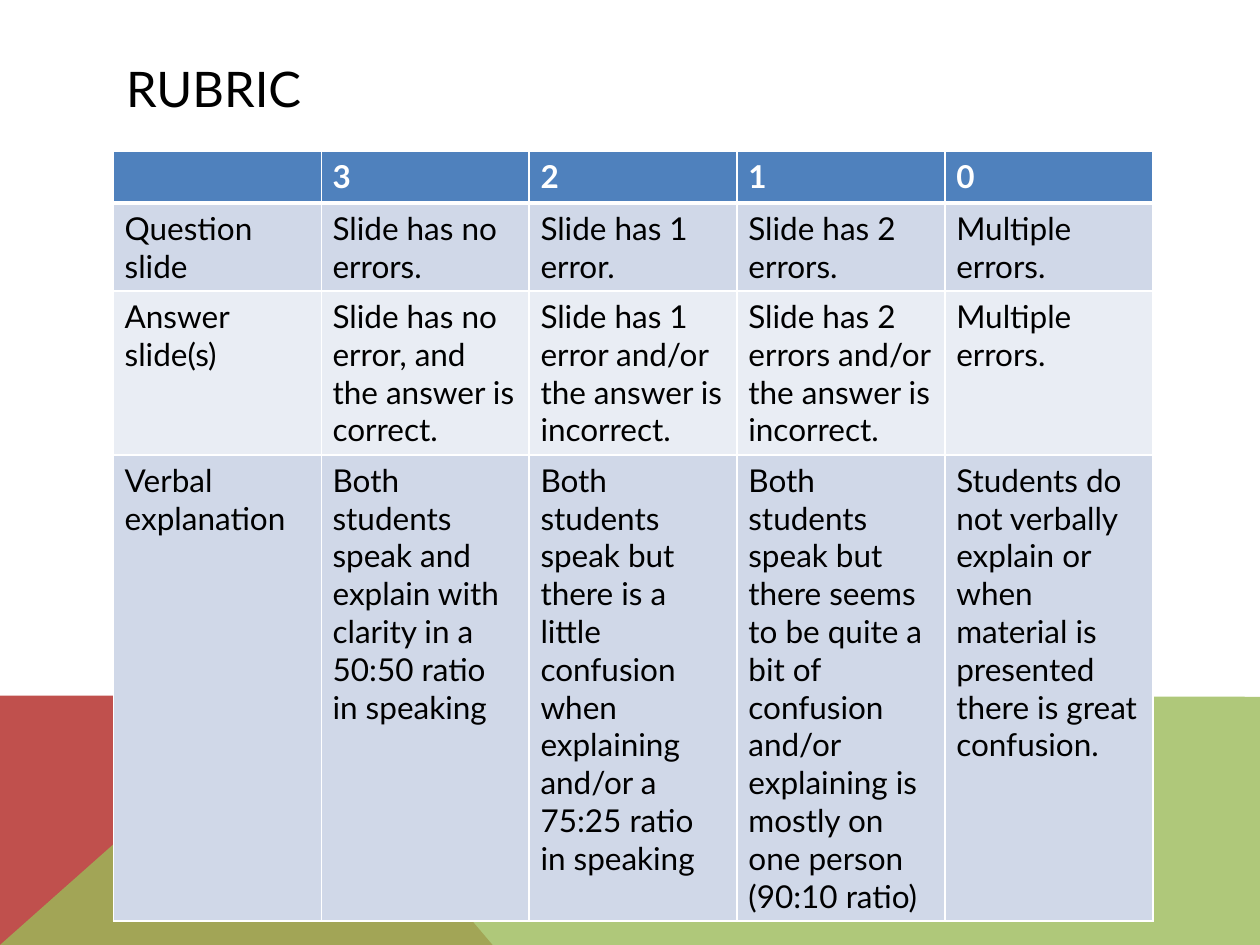
from lxml import etree
from pptx import Presentation
from pptx.dml.color import RGBColor
from pptx.enum.text import MSO_ANCHOR, PP_ALIGN
from pptx.oxml.ns import qn
from pptx.util import Inches, Pt

MIDDLE = MSO_ANCHOR.MIDDLE
LEFT = PP_ALIGN.LEFT
FONT = "Lato"
TITLE_ONLY_LAYOUT = 5

BLACK = RGBColor(0x00, 0x00, 0x00)
WHITE = RGBColor(0xFF, 0xFF, 0xFF)
RED = RGBColor(0xC0, 0x50, 0x4D)
GREEN = RGBColor(0x9B, 0xBB, 0x59)
HEADER_BLUE = RGBColor(0x4F, 0x81, 0xBD)
BAND_DARK = RGBColor(0xD0, 0xD8, 0xE8)
BAND_LIGHT = RGBColor(0xE9, 0xED, 0xF4)

ROW_HEIGHTS = [0.41, 0.7, 1.3, 3.7]
COLUMN_WIDTH = 1.65
RUBRIC = [
    ["", "3", "2", "1", "0"],
    [
        "Question slide",
        "Slide has no errors.",
        "Slide has 1 error.",
        "Slide has 2 errors.",
        "Multiple errors.",
    ],
    [
        "Answer slide(s)",
        "Slide has no error, and the answer is correct.",
        "Slide has 1 error and/or the answer is incorrect.",
        "Slide has 2 errors and/or the answer is incorrect.",
        "Multiple errors.",
    ],
    [
        "Verbal explanation",
        "Both students speak and explain with clarity in a 50:50 ratio in speaking",
        "Both students speak but there is a little confusion when explaining "
        "and/or a 75:25 ratio in speaking",
        "Both students speak but there seems to be quite a bit of confusion "
        "and/or explaining is mostly on one person (90:10 ratio)",
        "Students do not verbally explain or when material is presented "
        "there is great confusion.",
    ],
]


def style_font(font, size, color, bold=False):
    font.name = FONT
    font.size = Pt(size)
    font.bold = bold
    font.color.rgb = color


def add_polygon(slide, points, color, opacity=100):
    corners = [(Inches(x), Inches(y)) for x, y in points]
    builder = slide.shapes.build_freeform(*corners[0])
    builder.add_line_segments(corners[1:], close=True)
    shape = builder.convert_to_shape()
    shape.shadow.inherit = False
    shape.fill.solid()
    shape.fill.fore_color.rgb = color
    shape.line.fill.background()
    if opacity < 100:
        color_element = shape.element.spPr.find(".//" + qn("a:srgbClr"))
        etree.SubElement(color_element, qn("a:alpha"), val=str(opacity * 1000))


def add_title(slide, text):
    title = slide.shapes.title
    title.left, title.top = Inches(0.9), Inches(0.4)
    title.width, title.height = Inches(8.22), Inches(0.6)
    title.text_frame.text = text
    title.text_frame.vertical_anchor = MIDDLE
    paragraph = title.text_frame.paragraphs[0]
    paragraph.alignment = LEFT
    style_font(paragraph.font, 28, BLACK)
    slide.shapes.element.append(title.element)


def set_borders(cell, widths):
    properties = cell._tc.get_or_add_tcPr()
    for side, width in widths.items():
        line = etree.SubElement(properties, qn("a:ln" + side), w=str(Pt(width)))
        fill = etree.SubElement(line, qn("a:solidFill"))
        etree.SubElement(fill, qn("a:srgbClr"), val=str(WHITE))


def style_cell(cell, text, row):
    is_header = row == 0
    set_borders(
        cell,
        {"L": 1, "R": 1, "T": 3 if row == 1 else 1, "B": 3 if is_header else 1},
    )
    cell.fill.solid()
    band = BAND_DARK if row % 2 else BAND_LIGHT
    cell.fill.fore_color.rgb = HEADER_BLUE if is_header else band
    cell.margin_left = cell.margin_right = Inches(0.09)
    cell.margin_top = cell.margin_bottom = Inches(0.05)
    cell.text = text
    color = WHITE if is_header else BLACK
    style_font(cell.text_frame.paragraphs[0].font, 18, color, is_header)


def add_rubric_table(slide):
    columns = len(RUBRIC[0])
    table = slide.shapes.add_table(
        len(RUBRIC), columns, Inches(0.9), Inches(1.2),
        Inches(COLUMN_WIDTH * columns), Inches(sum(ROW_HEIGHTS)),
    ).table
    for column in table.columns:
        column.width = Inches(COLUMN_WIDTH)
    for row, texts in enumerate(RUBRIC):
        table.rows[row].height = Inches(ROW_HEIGHTS[row])
        for column, text in enumerate(texts):
            style_cell(table.cell(row, column), text, row)


def main():
    presentation = Presentation()
    presentation.slide_width = Inches(10)
    presentation.slide_height = Inches(7.5)
    layout = presentation.slide_layouts[TITLE_ONLY_LAYOUT]
    slide = presentation.slides.add_slide(layout)
    add_polygon(slide, [(0, 7.5), (0, 5.52), (2.23, 5.52), (3.91, 7.5)], RED)
    add_polygon(slide, [(0, 7.5), (2.23, 5.52), (10, 5.53), (10, 7.5)], GREEN, 80)
    add_title(slide, "RUBRIC")
    add_rubric_table(slide)
    presentation.save("out.pptx")


if __name__ == "__main__":
    main()
